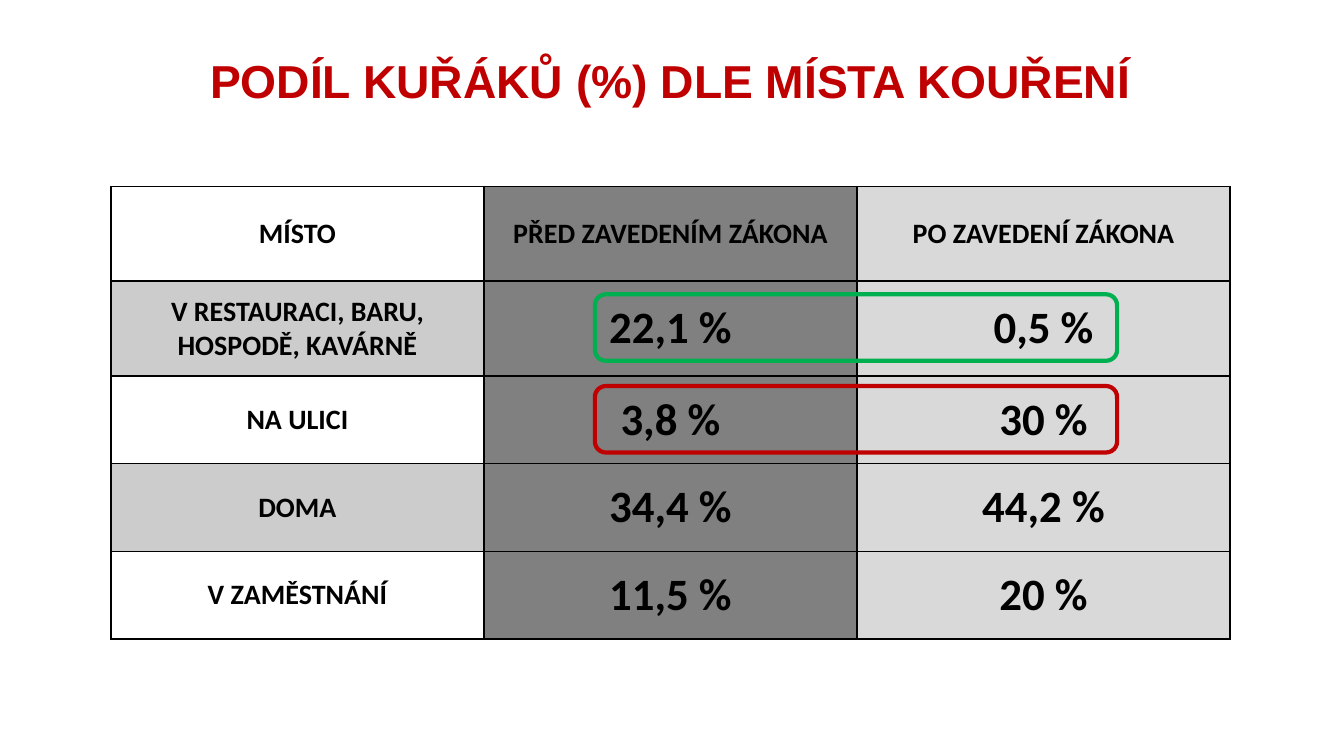
from lxml.etree import SubElement
from pptx import Presentation
from pptx.dml.color import RGBColor
from pptx.enum.shapes import MSO_SHAPE
from pptx.enum.text import MSO_ANCHOR, PP_ALIGN
from pptx.oxml.ns import qn
from pptx.util import Inches, Pt

TITLE = "PODÍL KUŘÁKŮ (%) DLE MÍSTA KOUŘENÍ"
ROWS = [
    ("MÍSTO", "PŘED ZAVEDENÍM ZÁKONA", "PO ZAVEDENÍ ZÁKONA"),
    ("V RESTAURACI, BARU, HOSPODĚ, KAVÁRNĚ", "22,1 %", "0,5 %"),
    ("NA ULICI", "3,8 %", "30 %"),
    ("DOMA", "34,4 %", "44,2 %"),
    ("V ZAMĚSTNÁNÍ", "11,5 %", "20 %"),
]
TALL = [0.94, 0.94, 0.87, 0.87, 0.87]
WIDE = 3.7
FILLS = [None, "808080", "D9D9D9"]
BAND = "CCCCCC"
FRAMES = [(2.92, "00B050"), (3.83, "C00000")]
HEAD = {"name": "Arial", "size": Pt(33), "bold": True}
LABEL = {"name": "Calibri", "size": Pt(20), "bold": True}
VALUE = {**LABEL, "size": Pt(32)}


def paint(form, tone):
    form.solid()
    form.fore_color.rgb = RGBColor.from_string(tone)


def write(frame, text, style, tone):
    frame.word_wrap = True
    frame.vertical_anchor = MSO_ANCHOR.MIDDLE
    par = frame.paragraphs[0]
    par.alignment = PP_ALIGN.CENTER
    run = par.add_run()
    run.text = text
    for key, val in style.items():
        setattr(run.font, key, val)
    paint(run.font.fill, tone)
    return par


def edge(cell, sides):
    props = cell._tc.get_or_add_tcPr()
    for spot, (side, width) in enumerate(sides.items()):
        line = SubElement(props, qn("a:" + side), w=str(Pt(width)))
        fill = SubElement(line, qn("a:solidFill"))
        SubElement(fill, qn("a:srgbClr"), val="000000")
        props.remove(line)
        props.insert(spot, line)


def place(shape, left, top, width, height):
    box = {"left": left, "top": top, "width": width, "height": height}
    for key, val in box.items():
        setattr(shape, key, Inches(val))


def main():
    deck = Presentation()
    deck.slide_width, deck.slide_height = Inches(13.33), Inches(7.5)
    slide = deck.slides.add_slide(deck.slide_layouts[5])
    shapes = slide.shapes

    place(shapes.title, 0.9, 0.22, 11.5, 1.22)
    write(shapes.title.text_frame, TITLE, HEAD, "C00000").line_spacing = 0.9

    size = [Inches(n) for n in (1.1, 1.85, WIDE * len(FILLS), sum(TALL))]
    table = shapes.add_table(len(ROWS), len(FILLS), *size).table
    table.first_row = table.horz_banding = False
    for col in table.columns:
        col.width = Inches(WIDE)
    for r, row in enumerate(ROWS):
        table.rows[r].height = Inches(TALL[r])
        for c, text in enumerate(row):
            cell = table.cell(r, c)
            cell.vertical_anchor = MSO_ANCHOR.MIDDLE
            write(cell.text_frame, text, VALUE if r and c else LABEL, "000000")
            tone = FILLS[c] or (BAND if r % 2 else None)
            if tone:
                paint(cell.fill, tone)
            else:
                cell.fill.background()
            edge(cell, {"lnL": 1, "lnR": 1, "lnT": 2 if r == 1 else 1,
                        "lnB": 2 if r == 0 else 1})

    for top, tone in FRAMES:
        frame = shapes.add_shape(MSO_SHAPE.ROUNDED_RECTANGLE, 0, 0, 0, 0)
        place(frame, 5.9, top, 5.18, 0.66)
        frame.shadow.inherit = False
        frame.fill.background()
        paint(frame.line.fill, tone)
        frame.line.width = Pt(3)

    deck.save("out.pptx")


if __name__ == "__main__":
    main()
